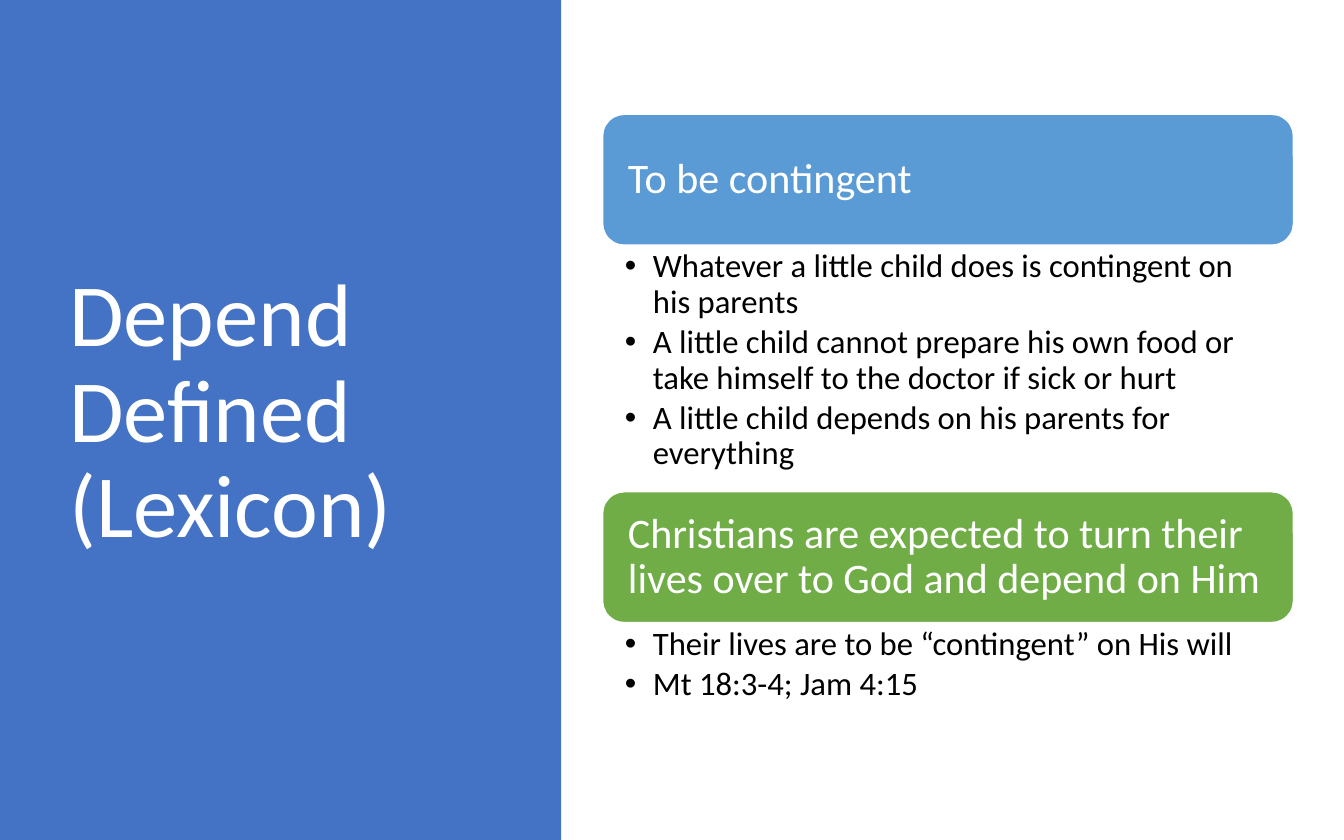
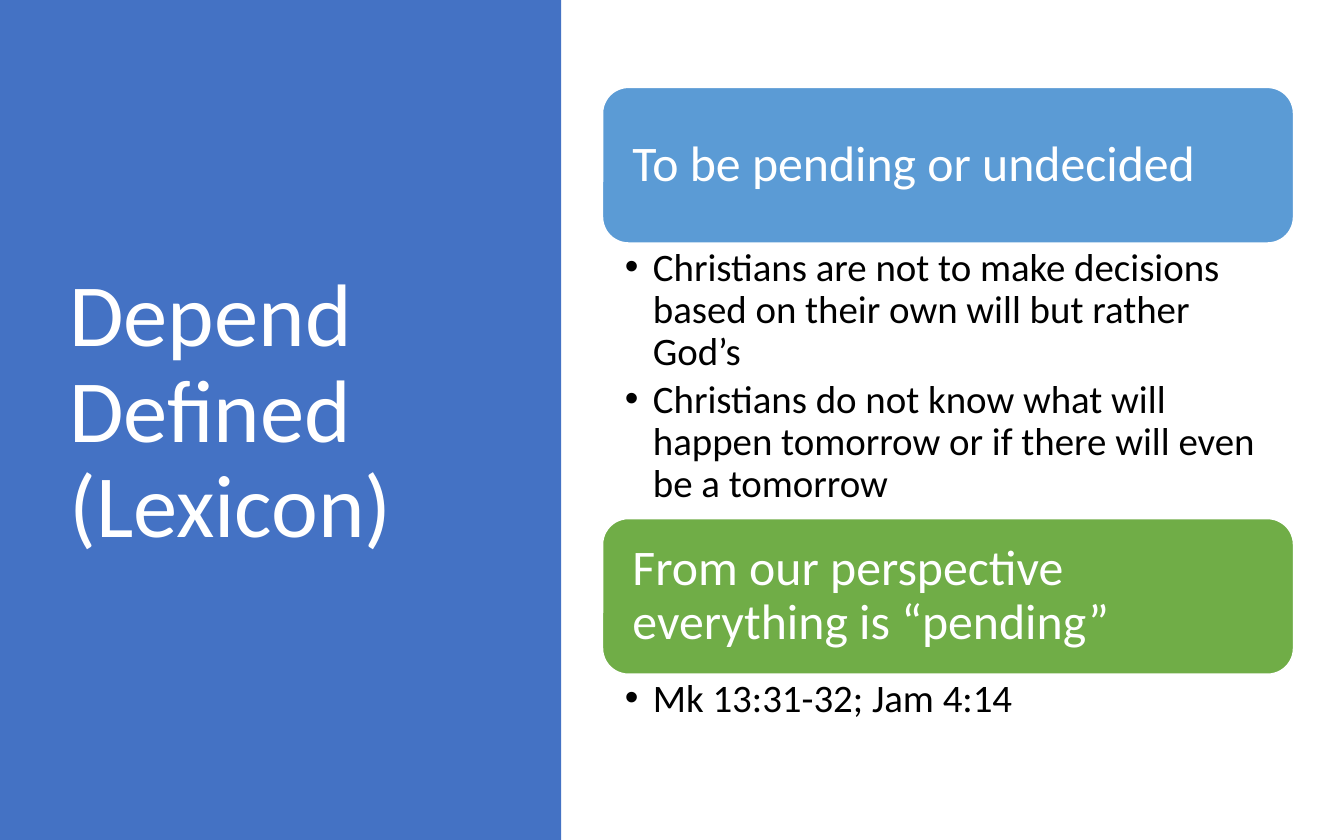
from lxml import etree
from pptx import Presentation, util as u
from pptx.dml.color import RGBColor
from pptx.enum import shapes, text
from pptx.oxml.ns import qn

# Slide grid: 120 columns by 75 rows
SLIDE_WIDTH, SLIDE_HEIGHT = u.Inches(12), u.Inches(7.5)
COLUMNS, ROWS = 120, 75

# Shared style
FONT = "Calibri"
WHITE, BLACK = "FFFFFF", "000000"
PANEL_COLOR = "4472C4"
HEADING_COLORS = ["5B9BD5", "70AD47"]
TITLE = "Depend Defined (Lexicon)"
TITLE_SIZE = 57
LINE_SPACING = 0.9
PANEL_WIDTH = 50.1
LIST_LEFT, LIST_WIDTH = 53.8, 61.7

# Each section is (heading, height of its bullet area in rows, bullets)
SLIDES = [
    {
        "top": 10.2, "heading_height": 11.7, "heading_inset": 0.17,
        "heading_size": 27, "bullet_size": 21, "bullet_right_inset": 0.21,
        "sections": [
            ("To be contingent", 22, [
                "Whatever a little child does is contingent on his parents",
                "A little child cannot prepare his own food or take himself "
                "to the doctor if sick or hurt",
                "A little child depends on his parents for everything",
            ]),
            ("Christians are expected to turn their lives over to God "
             "and depend on Him", 7.9, [
                 "Their lives are to be “contingent” on His will",
                 "Mt 18:3-4; Jam 4:15",
             ]),
        ],
    },
    {
        "top": 7.8, "heading_height": 13.9, "heading_inset": 0.2,
        "heading_size": 32, "bullet_size": 25, "bullet_right_inset": 0.25,
        "sections": [
            ("To be pending or undecided", 24.6, [
                "Christians are not to make decisions based on their own "
                "will but rather God’s",
                "Christians do not know what will happen tomorrow or if "
                "there will even be a tomorrow",
            ]),
            ("From our perspective everything is “pending”", 5.8, [
                "Mk 13:31-32; Jam 4:14",
            ]),
        ],
    },
]


def color(value):
    return RGBColor.from_string(value)


def place(left, top, width, height):
    """Turn columns and rows into slide lengths."""
    column, row = SLIDE_WIDTH / COLUMNS, SLIDE_HEIGHT / ROWS
    return [round(length) for length in
            (left * column, top * row, width * column, height * row)]


def add_block(slide, kind, box, fill, line=None):
    shape = slide.shapes.add_shape(kind, *place(*box))
    shape.shadow.inherit = False
    shape.fill.solid()
    shape.fill.fore_color.rgb = color(fill)
    if line:
        shape.line.color.rgb = color(line)
        shape.line.width = u.Pt(1)
    else:
        shape.line.fill.background()
    return shape


def set_frame(shape, anchor, insets):
    """Set wrapping, anchor and left, top, right, bottom insets in inches."""
    frame = shape.text_frame
    frame.word_wrap = True
    frame.vertical_anchor = anchor
    (frame.margin_left, frame.margin_top,
     frame.margin_right, frame.margin_bottom) = map(u.Inches, insets)
    return frame


def write(paragraph, words, size, text_color):
    paragraph.alignment = text.PP_ALIGN.LEFT
    paragraph.line_spacing = LINE_SPACING
    run = paragraph.add_run()
    run.text = words
    run.font.name = FONT
    run.font.size = u.Pt(size)
    run.font.color.rgb = color(text_color)


def add_bullet_mark(paragraph):
    properties = paragraph._p.get_or_add_pPr()
    indent = u.Inches(0.25)
    properties.set("marL", str(indent))
    properties.set("indent", str(-indent))
    etree.SubElement(properties, qn("a:buFont")).set("typeface", "Arial")
    etree.SubElement(properties, qn("a:buChar")).set("char", "•")


def add_title_panel(slide):
    add_block(slide, shapes.MSO_SHAPE.RECTANGLE,
              (0, 0, PANEL_WIDTH, ROWS), PANEL_COLOR)
    box = slide.shapes.add_textbox(*place(5.2, 6.8, 37.5, 60.2))
    frame = set_frame(box, text.MSO_ANCHOR.MIDDLE, (0.1, 0.05, 0.1, 0.05))
    write(frame.paragraphs[0], TITLE, TITLE_SIZE, WHITE)


def add_heading(slide, words, top, fill, content):
    shape = add_block(slide, shapes.MSO_SHAPE.ROUNDED_RECTANGLE,
                      (LIST_LEFT, top, LIST_WIDTH, content["heading_height"]),
                      fill, WHITE)
    frame = set_frame(shape, text.MSO_ANCHOR.MIDDLE,
                      [content["heading_inset"]] * 4)
    write(frame.paragraphs[0], words, content["heading_size"], WHITE)


def add_bullets(slide, bullets, top, height, content):
    box = slide.shapes.add_textbox(*place(LIST_LEFT, top, LIST_WIDTH, height))
    frame = set_frame(box, text.MSO_ANCHOR.TOP,
                      (0.2, 0.04, content["bullet_right_inset"], 0.04))
    size = content["bullet_size"]
    for index, words in enumerate(bullets):
        paragraph = frame.add_paragraph() if index else frame.paragraphs[0]
        write(paragraph, words, size, BLACK)
        paragraph.space_after = u.Pt(round(size * 0.16, 1))
        add_bullet_mark(paragraph)


def add_sections(slide, content):
    """Stack headings and their bullets from the top down."""
    top = content["top"]
    for fill, section in zip(HEADING_COLORS, content["sections"]):
        heading, height, bullets = section
        add_heading(slide, heading, top, fill, content)
        top += content["heading_height"]
        add_bullets(slide, bullets, top, height, content)
        top += height


def main():
    presentation = Presentation()
    presentation.slide_width = SLIDE_WIDTH
    presentation.slide_height = SLIDE_HEIGHT
    blank = presentation.slide_layouts[6]
    for content in SLIDES:
        slide = presentation.slides.add_slide(blank)
        add_title_panel(slide)
        add_sections(slide, content)
    presentation.save("out.pptx")


if __name__ == "__main__":
    main()
